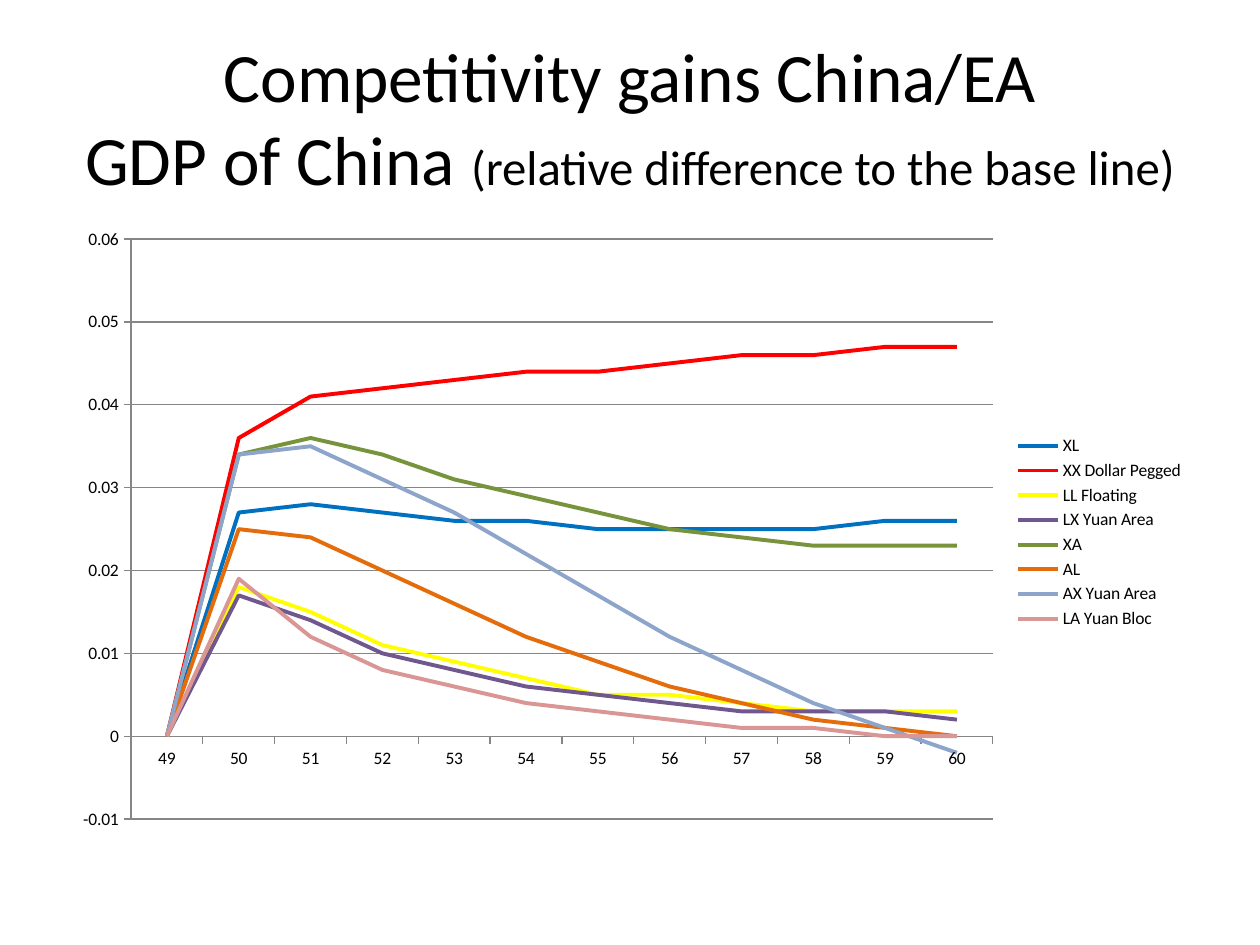
from lxml.etree import SubElement
from pptx import Presentation
from pptx.chart.data import CategoryChartData
from pptx.dml.color import RGBColor
from pptx.enum.chart import XL_CHART_TYPE as ChartType
from pptx.enum.chart import XL_LEGEND_POSITION as LegendPosition
from pptx.enum.chart import XL_MARKER_STYLE as MarkerStyle
from pptx.enum.chart import XL_TICK_MARK as TickMark
from pptx.enum.text import MSO_ANCHOR as Anchor
from pptx.enum.text import PP_ALIGN as Align
from pptx.oxml.ns import qn
from pptx.util import Pt

FONT = "Calibri"
BLACK = RGBColor(0x00, 0x00, 0x00)
GRAY = RGBColor(0x86, 0x86, 0x86)
BLUE = RGBColor(0x00, 0x70, 0xC0)
RED = RGBColor(0xFF, 0x00, 0x00)
YELLOW = RGBColor(0xFF, 0xFF, 0x00)
PURPLE = RGBColor(0x70, 0x58, 0x8E)
GREEN = RGBColor(0x77, 0x93, 0x3C)
ORANGE = RGBColor(0xE4, 0x6C, 0x0A)
LIGHT_BLUE = RGBColor(0x8E, 0xA5, 0xCB)
PINK = RGBColor(0xD9, 0x96, 0x94)

PERIODS = [str(period) for period in range(49, 61)]
SCENARIOS = [
    ("XL", BLUE, (0, 0.027, 0.028, 0.027, 0.026, 0.026,
                  0.025, 0.025, 0.025, 0.025, 0.026, 0.026)),
    ("XX Dollar Pegged", RED, (0, 0.036, 0.041, 0.042, 0.043, 0.044,
                               0.044, 0.045, 0.046, 0.046, 0.047, 0.047)),
    ("LL Floating", YELLOW, (0, 0.018, 0.015, 0.011, 0.009, 0.007,
                             0.005, 0.005, 0.004, 0.003, 0.003, 0.003)),
    ("LX Yuan Area", PURPLE, (0, 0.017, 0.014, 0.01, 0.008, 0.006,
                              0.005, 0.004, 0.003, 0.003, 0.003, 0.002)),
    ("XA", GREEN, (0, 0.034, 0.036, 0.034, 0.031, 0.029,
                   0.027, 0.025, 0.024, 0.023, 0.023, 0.023)),
    ("AL", ORANGE, (0, 0.025, 0.024, 0.02, 0.016, 0.012,
                    0.009, 0.006, 0.004, 0.002, 0.001, 0)),
    ("AX Yuan Area", LIGHT_BLUE, (0, 0.034, 0.035, 0.031, 0.027, 0.022,
                                  0.017, 0.012, 0.008, 0.004, 0.001, -0.002)),
    ("LA Yuan Bloc", PINK, (0, 0.019, 0.012, 0.008, 0.006, 0.004,
                            0.003, 0.002, 0.001, 0.001, 0, 0)),
]


def style_font(font, size):
    font.name = FONT
    font.size = Pt(size)
    font.color.rgb = BLACK


def style_line(line, color, width):
    line.color.rgb = color
    line.width = Pt(width)


def add_run(paragraph, text, size):
    run = paragraph.add_run()
    run.text = text
    style_font(run.font, size)


def add_title(slide, left, top, width, height):
    box = slide.shapes.add_textbox(Pt(left), Pt(top), Pt(width), Pt(height))
    frame = box.text_frame
    frame.word_wrap = True
    frame.vertical_anchor = Anchor.MIDDLE
    paragraph = frame.paragraphs[0]
    paragraph.alignment = Align.CENTER
    add_run(paragraph, "Competitivity gains China/EA", 39.6)
    paragraph.add_line_break()
    add_run(paragraph, "GDP of China ", 39.6)
    add_run(paragraph, "(relative difference to the base line)", 27.9)


def place_plot(chart, x, y, w, h):
    """Fix the inner plot area, in fractions of the chart's box."""
    plot_area = chart.plots[0]._element.getparent()
    for old_layout in plot_area.findall(qn("c:layout")):
        plot_area.remove(old_layout)
    layout = SubElement(plot_area, qn("c:layout"))
    plot_area.insert(0, layout)
    manual = SubElement(layout, qn("c:manualLayout"))
    settings = [("layoutTarget", "inner"), ("xMode", "edge"), ("yMode", "edge"),
                ("x", x), ("y", y), ("w", w), ("h", h)]
    for tag, value in settings:
        SubElement(manual, qn(f"c:{tag}")).set("val", str(value))


def add_gdp_chart(slide, left, top, width, height):
    data = CategoryChartData(number_format="General")
    data.categories = PERIODS
    for name, _, values in SCENARIOS:
        data.add_series(name, values)
    chart = slide.shapes.add_chart(
        ChartType.LINE, Pt(left), Pt(top), Pt(width), Pt(height), data).chart
    style_font(chart.font, 10)
    chart.has_title = False
    chart.has_legend = True
    chart.legend.position = LegendPosition.RIGHT
    chart.legend.include_in_layout = False
    chart.plots[0].vary_by_categories = False

    for axis in (chart.category_axis, chart.value_axis):
        axis.major_tick_mark = TickMark.OUTSIDE
        axis.minor_tick_mark = TickMark.NONE
        style_line(axis.format.line, GRAY, 0.75)
    value_axis = chart.value_axis
    value_axis.minimum_scale = -0.01
    value_axis.maximum_scale = 0.06
    value_axis.major_unit = 0.01
    value_axis.has_major_gridlines = True
    style_line(value_axis.major_gridlines.format.line, GRAY, 0.75)

    for series, (_, color, _) in zip(chart.plots[0].series, SCENARIOS):
        series.smooth = False
        series.marker.style = MarkerStyle.NONE
        style_line(series.format.line, color, 2.25)
    place_plot(chart, 0.06, 0.03, 0.76, 0.93)


def main():
    presentation = Presentation()
    presentation.slide_width = Pt(720)
    presentation.slide_height = Pt(540)
    slide = presentation.slides.add_slide(presentation.slide_layouts[6])
    add_title(slide, 36, 21.6, 648, 90)
    add_gdp_chart(slide, 36, 126, 648, 356.4)
    presentation.save("out.pptx")


if __name__ == "__main__":
    main()
